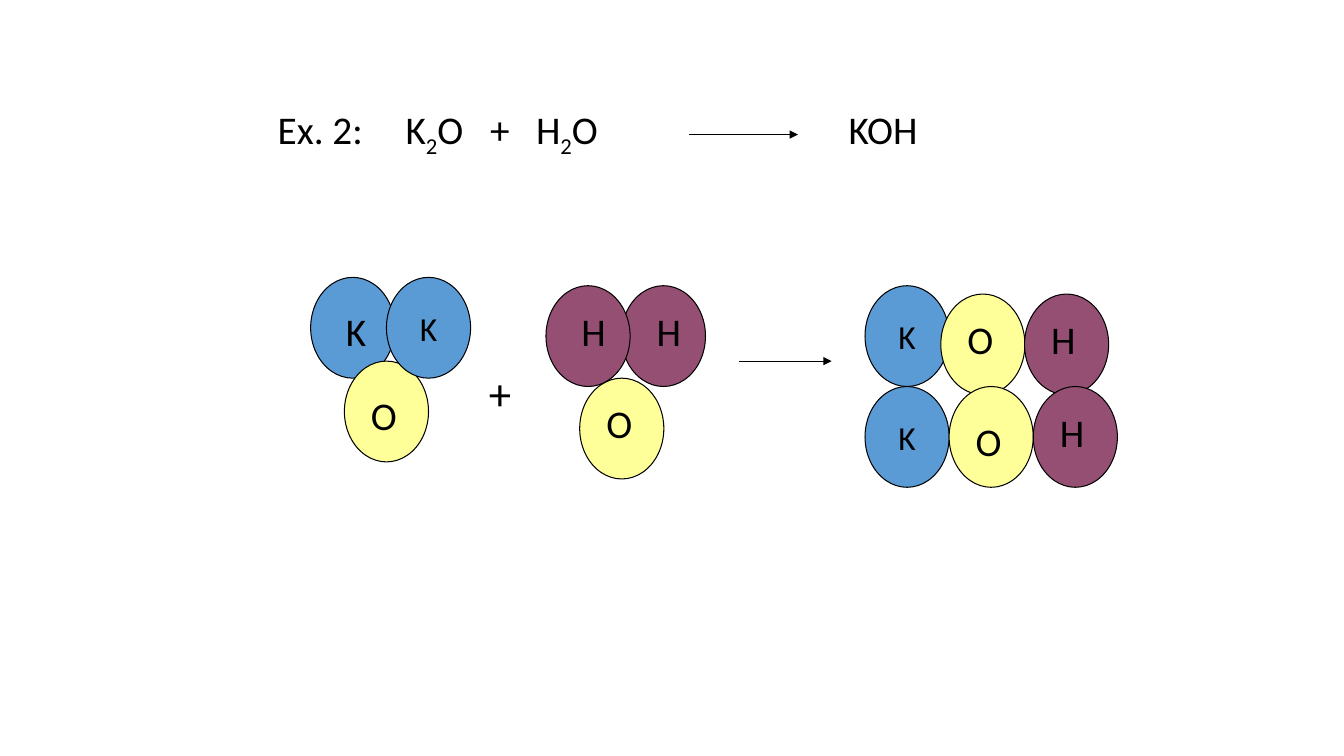
"""Build the slide that shows potassium oxide reacting with water."""
from lxml import etree
from pptx import Presentation
from pptx.dml.color import RGBColor
from pptx.enum import shapes, text
from pptx.oxml import ns
from pptx.util import Cm, Pt

BLACK = RGBColor(0x00, 0x00, 0x00)
BLUE = RGBColor(0x5B, 0x9B, 0xD5)
YELLOW = RGBColor(0xFF, 0xFF, 0x99)
PLUM = RGBColor(0x95, 0x4F, 0x72)
ELEMENT_COLOURS = {"K": BLUE, "O": YELLOW, "H": PLUM}

NEAR, FAR = 0.42, 0.64
POTASSIUM_OXIDE = [("K", 7.83, 6.99, (FAR, FAR)), ("O", 8.68, 9.1, (NEAR, FAR)),
                   ("K", 9.74, 6.99, None)]
WATER = [("O", 14.61, 9.53, (NEAR, NEAR)), ("H", 15.66, 7.2, (FAR, NEAR)),
         ("H", 13.76, 7.2, (FAR, NEAR))]
UPPER_HYDROXIDE = [("K", 21.8, 7.2, None), ("O", 23.71, 7.41, (NEAR, NEAR)),
                   ("H", 25.82, 7.41, (NEAR, NEAR))]
LOWER_HYDROXIDE = [("K", 21.8, 9.74, None), ("O", 23.92, 9.74, (NEAR, FAR)),
                   ("H", 26.04, 9.74, (NEAR, NEAR))]

EQUATION = [("Ex. 2:\tK", False), ("2", True), ("O\t+\tH", False), ("2", True),
            ("O\tKOH", False)]
EQUATION_TABS = [3.22, 5.35, 6.51, 14.39]


def add_run(paragraph, words, size):
    """Append a black Calibri run and return it."""
    run = paragraph.add_run()
    run.text = words
    run.font.name = "Calibri"
    run.font.size = Pt(size)
    run.font.color.rgb = BLACK
    return run


def add_label(slide, words, left, top, size=28):
    """Add a one-symbol text box."""
    frame = slide.shapes.add_textbox(Cm(left), Cm(top), Cm(1.27), Cm(1.45)).text_frame
    frame.word_wrap = True
    add_run(frame.paragraphs[0], words, size)


def add_atom(slide, symbol, left, top, centred):
    """Add an outlined ellipse, with its symbol inside when centred."""
    atom = slide.shapes.add_shape(shapes.MSO_SHAPE.OVAL, Cm(left), Cm(top), Cm(2.12), Cm(2.54))
    atom.shadow.inherit = False
    atom.fill.solid()
    atom.fill.fore_color.rgb = ELEMENT_COLOURS[symbol]
    atom.line.color.rgb = BLACK
    atom.line.width = Pt(0.75)
    if centred:
        frame = atom.text_frame
        frame.word_wrap = False
        frame.vertical_anchor = text.MSO_ANCHOR.MIDDLE
        frame.paragraphs[0].alignment = text.PP_ALIGN.CENTER
        add_run(frame.paragraphs[0], symbol, 24)


def add_molecule(slide, atoms):
    """Add the atoms of a molecule, then the labels that lie over them."""
    for symbol, left, top, offset in atoms:
        add_atom(slide, symbol, left, top, centred=offset is None)
    for symbol, left, top, offset in atoms:
        if offset:
            add_label(slide, symbol, left + offset[0], top + offset[1])


def add_reaction_arrow(slide, start, end, height):
    """Add a horizontal arrow pointing right."""
    arrow = slide.shapes.add_connector(
        shapes.MSO_CONNECTOR.STRAIGHT, Cm(start), Cm(height), Cm(end), Cm(height))
    arrow.line.color.rgb = BLACK
    arrow.line.width = Pt(0.75)
    etree.SubElement(arrow.line._get_or_add_ln(), ns.qn("a:tailEnd"), type="triangle")
    etree.SubElement(arrow._element.spPr, ns.qn("a:effectLst"))


def add_equation(slide):
    """Add the chemical equation, spaced by tab stops."""
    frame = slide.shapes.add_textbox(Cm(6.75), Cm(2.54), Cm(22.86), Cm(12.57)).text_frame
    frame.word_wrap = True
    equation = frame.paragraphs[0]
    equation.line_spacing = 0.9
    equation.space_before = Pt(10)
    tabs = etree.SubElement(equation._p.get_or_add_pPr(), ns.qn("a:tabLst"))
    for position in EQUATION_TABS:
        etree.SubElement(tabs, ns.qn("a:tab"), pos=str(Cm(position)), algn="l")
    for words, subscript in EQUATION:
        run = add_run(equation, words, 28)
        if subscript:
            run.font._element.set("baseline", "-25000")


def main():
    """Build and save the slide."""
    deck = Presentation()
    deck.slide_width, deck.slide_height = Cm(33.87), Cm(19.05)
    slide = deck.slides.add_slide(deck.slide_layouts[6])
    add_equation(slide)
    add_reaction_arrow(slide, 17.36, 20.11, 3.39)
    for molecule in (POTASSIUM_OXIDE, WATER, UPPER_HYDROXIDE, LOWER_HYDROXIDE):
        add_molecule(slide, molecule)
    add_label(slide, "+", 12.07, 9.1, size=32)
    add_reaction_arrow(slide, 18.63, 20.96, 9.1)
    deck.save("out.pptx")


if __name__ == "__main__":
    main()
